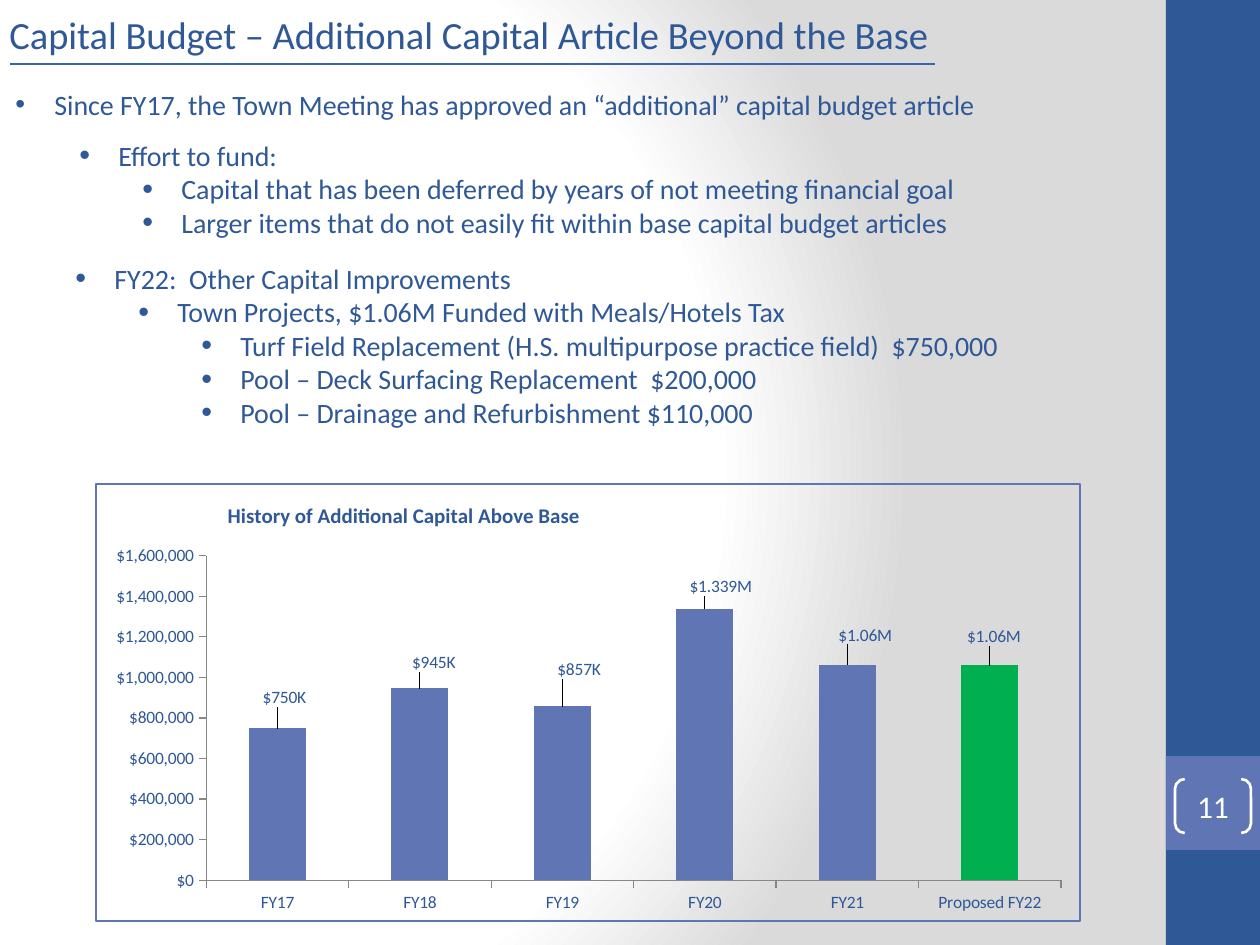
from pptx import Presentation
from pptx.chart.data import CategoryChartData
from pptx.dml.color import RGBColor
from pptx.enum.chart import XL_CHART_TYPE as ChartType, XL_LABEL_POSITION as LabelPos, XL_TICK_MARK as Tick
from pptx.enum.shapes import MSO_CONNECTOR as Connector, MSO_SHAPE as Shape
from pptx.enum.text import MSO_ANCHOR as Anchor, PP_ALIGN as Align
from pptx.oxml import parse_xml
from pptx.oxml.ns import nsdecls, qn
from pptx.oxml.xmlchemy import OxmlElement
from pptx.util import Emu, Pt

# Content
FONT = "Calibri"
NAVY, BLUE, RULE, GREEN, WHITE, AXIS = "2F5897", "6076B4", "3666AF", "00B050", "FFFFFF", "878787"
TITLE = "Capital Budget – Additional Capital Article Beyond the Base"
PAGE_NUMBER = "11"

# Each list: box in px, bullet size in percent, (level, text) items
LISTS = [
    ((3, 81, 1120, 47), 100, [
        (0, "Since FY17, the Town Meeting has approved an “additional” capital budget article"),
    ]),
    ((67, 132, 1121, 115), 110, [
        (0, "Effort to fund:"),
        (1, "Capital that has been deferred by years of not meeting financial goal"),
        (1, "Larger items that do not easily fit within base capital budget articles"),
    ]),
    ((0, 255, 1169, 183), 110, [
        (1, "FY22:  Other Capital Improvements"),
        (2, "Town Projects, $1.06M Funded with Meals/Hotels Tax"),
        (3, "Turf Field Replacement (H.S. multipurpose practice field)  $750,000"),
        (3, "Pool – Deck Surfacing Replacement  $200,000"),
        (3, "Pool – Drainage and Refurbishment $110,000"),
    ]),
]
HANG, INDENT_STEP = 39, 63

# Bars: category, value, label, label shift in px from its usual place
CHART_TITLE = "History of Additional Capital Above Base"
BARS = [
    ("FY17", 750000, "$750K", (7, -16)),
    ("FY18", 945000, "$945K", (14, -11)),
    ("FY19", 857000, "$857K", (17, -22)),
    ("FY20", 1339000, "$1.339M", (16, -7)),
    ("FY21", 1062500, "$1.06M", (18, -15)),
    ("Proposed FY22", 1060000, "$1.06M", (4, -14)),
]
CHART_BOX = (95, 483, 986, 439)
PLOT_BOX = (205, 555, 857, 326)
CHART_TITLE_AT = (223, 497)


def px(length):
    return Emu(round(length * 914400 / 126))


def place(box):
    return [px(length) for length in box]


def color(hex_code):
    return RGBColor.from_string(hex_code)


def style(font, size, hex_code, bold=False):
    font.name, font.size, font.bold = FONT, Pt(size), bold
    font.color.rgb = color(hex_code)


def add_run(para, text, size, hex_code):
    span = para.add_run()
    span.text = text
    style(span.font, size, hex_code)


def add_text_box(page, box):
    frame = page.shapes.add_textbox(*place(box)).text_frame
    frame.word_wrap = True
    return frame


def add_bullet(para, level, percent):
    props = para._p.get_or_add_pPr()
    props.set("marL", str(px(HANG + level * INDENT_STEP)))
    props.set("indent", str(px(-HANG)))
    for tag, key, value in (("a:buSzPct", "val", str(percent * 1000)),
                            ("a:buFont", "typeface", "Arial"), ("a:buChar", "char", "•")):
        child = OxmlElement(tag)
        child.set(key, value)
        props.append(child)


def manual_layout(**settings):
    parts = "".join(f'<c:{tag} val="{value}"/>' for tag, value in settings.items())
    return parse_xml(f'<c:layout {nsdecls("c")}><c:manualLayout>{parts}</c:manualLayout></c:layout>')


def share(left, top):
    """Turn a px distance into rounded fractions of the chart."""
    return round(left / CHART_BOX[2], 3), round(top / CHART_BOX[3], 3)


def inside_chart(left, top):
    return share(left - CHART_BOX[0], top - CHART_BOX[1])


def set_background(page):
    stops = "".join(f'<a:gs pos="{pos * 1000}"><a:srgbClr val="{hex_code}"/></a:gs>'
                    for pos, hex_code in ((0, WHITE), (75, WHITE), (100, "DADADA")))
    page.element.cSld.insert(0, parse_xml(
        f'<p:bg {nsdecls("p", "a")}><p:bgPr><a:gradFill rotWithShape="1"><a:gsLst>{stops}</a:gsLst>'
        '<a:path path="circle"><a:fillToRect l="20000" t="50000" r="100000" b="50000"/></a:path>'
        '</a:gradFill><a:effectLst/></p:bgPr></p:bg>'))


def add_chart(page):
    data = CategoryChartData()
    data.categories = [bar[0] for bar in BARS]
    data.add_series("Series 1", [bar[1] for bar in BARS])
    chart = page.shapes.add_chart(ChartType.COLUMN_CLUSTERED, *place(CHART_BOX), data).chart
    style(chart.font, 10, NAVY)
    chart.has_legend = False

    # Title and plot area
    title = chart.chart_title
    add_run(title.text_frame.paragraphs[0], CHART_TITLE, 12, NAVY)
    title.text_frame.paragraphs[0].runs[0].font.bold = True
    title.include_in_layout = True
    left, top = inside_chart(*CHART_TITLE_AT)
    for old in title._element.findall(qn("c:layout")):
        title._element.remove(old)
    title._element.find(qn("c:tx")).addnext(manual_layout(xMode="edge", yMode="edge", x=left, y=top))
    left, top = inside_chart(*PLOT_BOX[:2])
    width, height = share(*PLOT_BOX[2:])
    plot_area = chart._chartSpace.chart.plotArea
    for old in plot_area.findall(qn("c:layout")):
        plot_area.remove(old)
    plot_area.insert(0, manual_layout(layoutTarget="inner", xMode="edge", yMode="edge",
                                      x=left, y=top, w=width, h=height))

    # Axes
    for axis in (chart.category_axis, chart.value_axis):
        axis.has_major_gridlines = False
        axis.major_tick_mark, axis.minor_tick_mark = Tick.OUTSIDE, Tick.NONE
        axis.format.line.color.rgb = color(AXIS)
    values = chart.value_axis
    values.minimum_scale, values.maximum_scale, values.major_unit = 0, 1600000, 200000
    values.tick_labels.number_format = "\\$#,##0"
    values.tick_labels.number_format_is_linked = False

    # Bars and their labels
    plot = chart.plots[0]
    plot.gap_width, plot.vary_by_categories = 150, False
    series = plot.series[0]
    series.format.fill.solid()
    series.format.fill.fore_color.rgb = color(BLUE)
    last_fill = series.points[len(BARS) - 1].format.fill
    last_fill.solid()
    last_fill.fore_color.rgb = color(GREEN)
    series.data_labels.show_value = True
    for index, (_, _, text, shift) in enumerate(BARS):
        label = series.points[index].data_label
        add_run(label.text_frame.paragraphs[0], text, 10, NAVY)
        label.position = LabelPos.OUTSIDE_END
        x, y = share(*shift)
        element = series.data_labels._element.findall(qn("c:dLbl"))[index]
        element.find(qn("c:idx")).addnext(manual_layout(x=x, y=y))

    # Frame
    chart._chartSpace.find(qn("c:txPr")).addprevious(parse_xml(
        f'<c:spPr {nsdecls("c", "a")}><a:noFill/><a:ln w="{Pt(1.25)}"><a:solidFill>'
        f'<a:srgbClr val="{BLUE}"/></a:solidFill></a:ln></c:spPr>'))


def main():
    deck = Presentation()
    deck.slide_width, deck.slide_height = px(1260), px(945)
    page = deck.slides.add_slide(deck.slide_layouts[6])
    set_background(page)

    # Side band and number tile
    for box, fill in (((1166, 0, 94, 945), NAVY), ((1166, 756, 94, 94), BLUE)):
        band = page.shapes.add_shape(Shape.RECTANGLE, *place(box))
        band.shadow.inherit = False
        band.fill.solid()
        band.fill.fore_color.rgb = color(fill)
        band.line.fill.background()

    # Heading and rule
    heading = add_text_box(page, (-3, 5, 1071, 59))
    add_run(heading.paragraphs[0], TITLE, 22, NAVY)
    rule = page.shapes.add_connector(Connector.STRAIGHT, *place((10, 64, 935, 64)))
    rule.line.color.rgb, rule.line.width = color(RULE), Pt(1.25)
    rule._element.spPr.append(OxmlElement("a:effectLst"))

    # Bullet lists
    for box, percent, items in LISTS:
        frame = add_text_box(page, box)
        for index, (level, text) in enumerate(items):
            para = frame.add_paragraph() if index else frame.paragraphs[0]
            para.level = level
            add_bullet(para, level, percent)
            add_run(para, text, 16, NAVY)

    add_chart(page)

    # Page number
    badge = page.shapes.add_shape(Shape.DOUBLE_BRACKET, *place((1175, 779, 76, 54)))
    badge.shadow.inherit = False
    badge.adjustments[0] = 0.18
    badge.fill.background()
    badge.line.color.rgb, badge.line.width = color(WHITE), Pt(1.5)
    frame = badge.text_frame
    frame.margin_left = frame.margin_right = frame.margin_top = frame.margin_bottom = 0
    frame.vertical_anchor = Anchor.MIDDLE
    frame.paragraphs[0].alignment = Align.CENTER
    add_run(frame.paragraphs[0], PAGE_NUMBER, 18, WHITE)

    deck.save("out.pptx")


if __name__ == "__main__":
    main()
